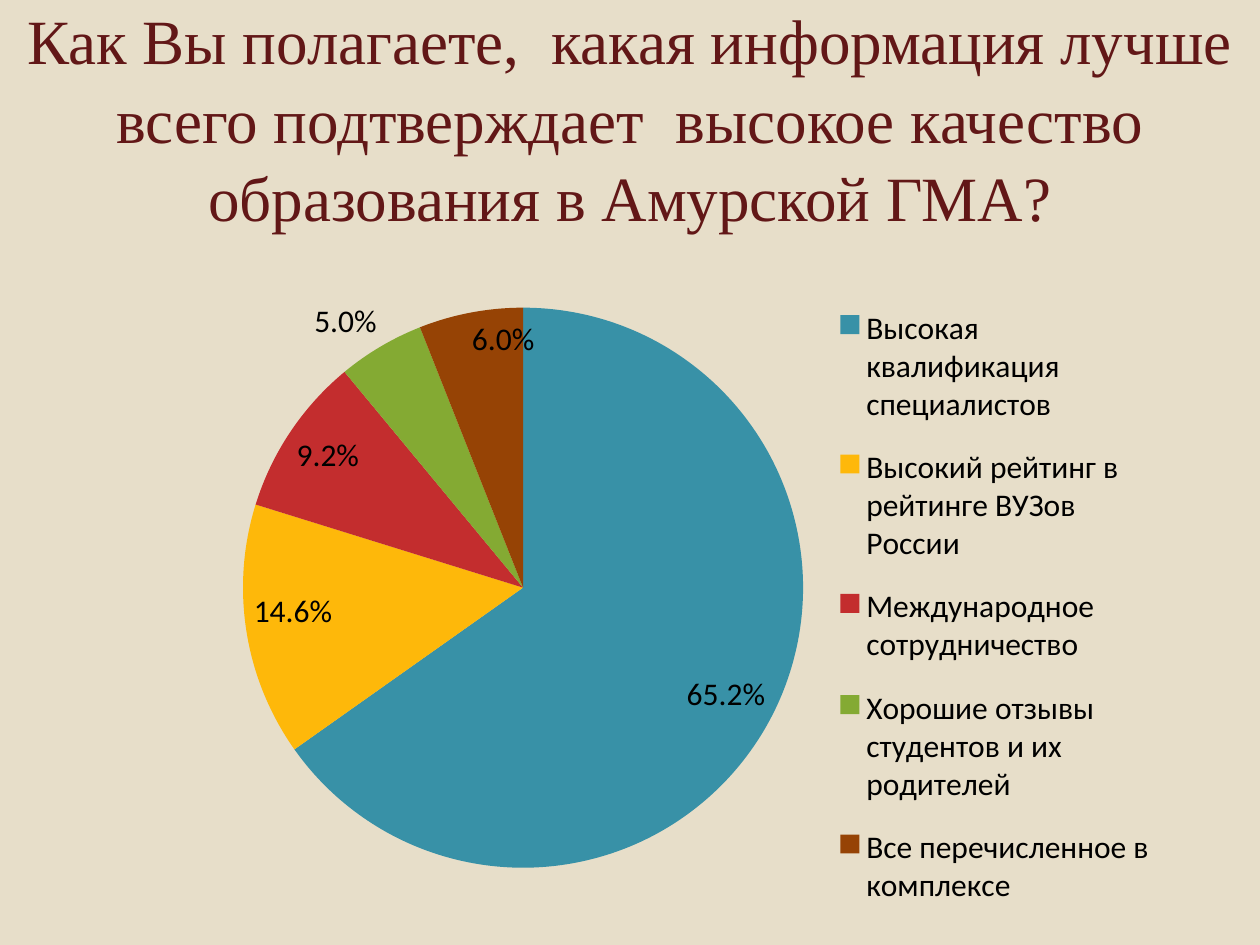
from dataclasses import dataclass

from lxml.etree import SubElement
from pptx import Presentation
from pptx.chart.data import CategoryChartData
from pptx.dml.color import RGBColor
from pptx.enum.chart import XL_CHART_TYPE, XL_LABEL_POSITION, XL_LEGEND_POSITION
from pptx.enum.text import MSO_ANCHOR, PP_ALIGN
from pptx.oxml.ns import qn
from pptx.util import Cm, Pt


@dataclass(frozen=True)
class Theme:
    background: str = "E7DEC9"
    title_color: str = "621717"
    text_color: str = "000000"
    title_font: str = "Times New Roman"
    chart_font: str = "Calibri"
    title_size: int = 36
    chart_size: int = 18


THEME = Theme()
TITLE = ("Как Вы полагаете,  какая информация лучше всего подтверждает  "
         "высокое качество образования в Амурской ГМА?")
# Answer, share in percent, slice colour
ANSWERS = [
    ("Высокая квалификация специалистов", 65.2, "3891A7"),
    ("Высокий рейтинг в рейтинге ВУЗов России", 14.6, "FEB80A"),
    ("Международное сотрудничество", 9.2, "C32D2E"),
    ("Хорошие отзывы студентов и их родителей", 5, "84AA33"),
    ("Все перечисленное в комплексе", 6, "964305"),
]
OUTSIDE_LABEL = 3
PERCENT_FORMAT = "0.0%"


def set_attributes(target, values):
    for name, value in values.items():
        setattr(target, name, value)


def set_font(font, name, size, color):
    set_attributes(font, {"name": name, "size": Pt(size), "bold": False})
    font.color.rgb = RGBColor.from_string(color)


def set_chart_font(font):
    set_font(font, THEME.chart_font, THEME.chart_size, THEME.text_color)


def set_layout(parent, index, box, inner=False):
    """Place a chart part at fractions (x, y, w, h) of the chart area."""
    for old_layout in parent.findall(qn("c:layout")):
        parent.remove(old_layout)
    layout = SubElement(parent, qn("c:layout"))
    parent.insert(index, layout)
    manual = SubElement(layout, qn("c:manualLayout"))
    settings = {"layoutTarget": "inner"} if inner else {}
    settings |= {"xMode": "edge", "yMode": "edge"}
    settings |= dict(zip("xywh", box))
    for name, value in settings.items():
        SubElement(manual, qn(f"c:{name}")).set("val", str(value))


def add_title(slide, left, top, width, height):
    shape = slide.shapes.add_textbox(Cm(left), Cm(top), Cm(width), Cm(height))
    set_attributes(shape.text_frame, {
        "word_wrap": True, "vertical_anchor": MSO_ANCHOR.MIDDLE})
    paragraph = shape.text_frame.paragraphs[0]
    set_attributes(paragraph, {
        "text": TITLE, "alignment": PP_ALIGN.CENTER, "line_spacing": 1.04})
    set_font(paragraph.runs[0].font, THEME.title_font, THEME.title_size,
             THEME.title_color)


def format_labels(series):
    labels = series.data_labels
    set_attributes(labels, {
        "show_percentage": True, "show_value": False,
        "number_format": PERCENT_FORMAT, "number_format_is_linked": False,
        "position": XL_LABEL_POSITION.INSIDE_END})
    set_chart_font(labels.font)

    # The narrow slice carries its percentage outside the pie
    label = series.points[OUTSIDE_LABEL].data_label
    set_chart_font(label.font)
    label.position = XL_LABEL_POSITION.OUTSIDE_END
    element = next(series.points[OUTSIDE_LABEL].data_label.font and
                   series._element.iter(qn("c:dLbl")))
    element.find(qn("c:showVal")).set("val", "0")
    element.find(qn("c:showPercent")).set("val", "1")
    number_format = SubElement(element, qn("c:numFmt"))
    number_format.set("formatCode", PERCENT_FORMAT)
    number_format.set("sourceLinked", "0")
    element.insert(1, number_format)


def add_answer_chart(slide, left, top, width, height):
    data = CategoryChartData(number_format="0.0")
    data.categories = [answer for answer, _, _ in ANSWERS]
    data.add_series("Series 1", [share for _, share, _ in ANSWERS])
    chart = slide.shapes.add_chart(
        XL_CHART_TYPE.PIE, Cm(left), Cm(top), Cm(width), Cm(height), data).chart
    set_attributes(chart, {"has_title": False, "has_legend": True})
    set_chart_font(chart.font)

    # Slices and their labels
    plot = chart.plots[0]
    plot.vary_by_categories = True
    series = plot.series[0]
    for index, (_, _, color) in enumerate(ANSWERS):
        fill = series.points[index].format.fill
        fill.solid()
        fill.fore_color.rgb = RGBColor.from_string(color)
    format_labels(series)

    # Legend to the right of the pie
    set_attributes(chart.legend, {
        "position": XL_LEGEND_POSITION.RIGHT, "include_in_layout": False})
    set_chart_font(chart.legend.font)
    chart_element = chart.element.find(qn("c:chart"))
    set_layout(chart_element.find(qn("c:plotArea")), 0,
               (0.06, 0.16, 0.57, 0.74), inner=True)
    set_layout(chart_element.find(qn("c:legend")), 1, (0.66, 0.13, 0.33, 0.85))


def main():
    presentation = Presentation()
    set_attributes(presentation, {
        "slide_width": Cm(25.4), "slide_height": Cm(19.05)})
    slide = presentation.slides.add_slide(presentation.slide_layouts[6])
    background = slide.background.fill
    background.solid()
    background.fore_color.rgb = RGBColor.from_string(THEME.background)

    add_answer_chart(slide, 3.71, 3.73, 19.81, 15.32)
    add_title(slide, 0, 0.76, 25.4, 3.18)
    presentation.save("out.pptx")


if __name__ == "__main__":
    main()
